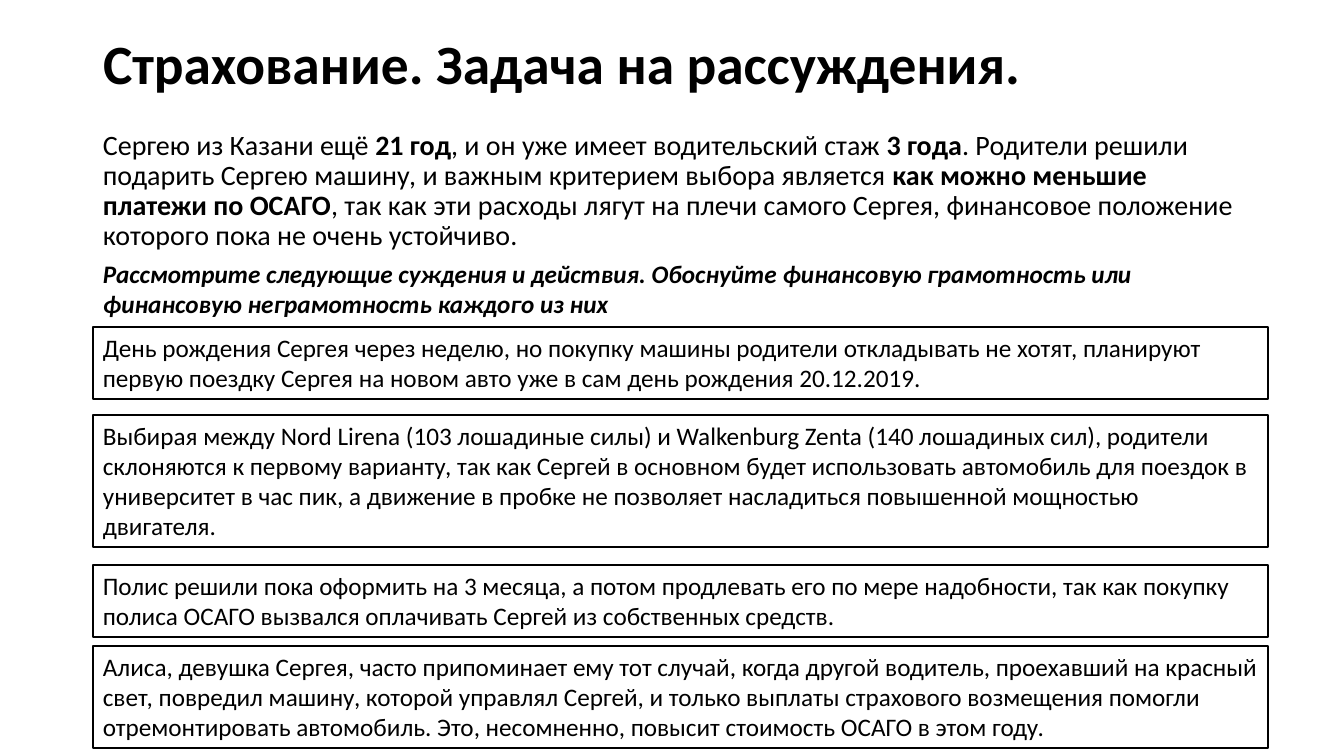
"""Build a slide with a reasoning task about car insurance."""
from pptx import Presentation
from pptx.dml.color import RGBColor
from pptx.enum.shapes import MSO_SHAPE
from pptx.enum.text import MSO_ANCHOR, MSO_AUTO_SIZE, PP_ALIGN
from pptx.util import Emu, Pt

TITLE = "Страхование. Задача на рассуждения."
STORY = [
    ("Сергею из Казани ещё ", False),
    ("21 год", True),
    (", и он уже имеет водительский стаж ", False),
    ("3 года", True),
    (". Родители решили подарить Сергею машину, и важным критерием выбора является ", False),
    ("как можно меньшие платежи по ОСАГО", True),
    (", так как эти расходы лягут на плечи самого Сергея, финансовое положение "
     "которого пока не очень устойчиво.", False),
]
TASK = ("Рассмотрите следующие суждения и действия. Обоснуйте финансовую грамотность или "
        "финансовую неграмотность каждого из них")
JUDGEMENTS = [
    (327, 72, "День рождения Сергея через неделю, но покупку машины родители откладывать не хотят, "
     "планируют первую поездку Сергея на новом авто уже в сам день рождения 20.12.2019."),
    (415, 132, "Выбирая между Nord Lirena (103 лошадиные силы) и Walkenburg Zenta (140 лошадиных сил), "
     "родители склоняются к первому варианту, так как Сергей в основном будет использовать "
     "автомобиль для поездок в университет в час пик, а движение в пробке не позволяет "
     "насладиться повышенной мощностью двигателя."),
    (565, 72, "Полис решили пока оформить на 3 месяца, а потом продлевать его по мере надобности, "
     "так как покупку полиса ОСАГО вызвался оплачивать Сергей из собственных средств."),
    (646, 102, "Алиса, девушка Сергея, часто припоминает ему тот случай, когда другой водитель, "
     "проехавший на красный свет, повредил машину, которой управлял Сергей, и только выплаты "
     "страхового возмещения помогли отремонтировать автомобиль. Это, несомненно, повысит "
     "стоимость ОСАГО в этом году."),
]
COLOURS = {"ink": "000000", "paper": "FFFFFF"}
FONT = "Calibri"
LEFT = 93


def px(length):
    return Emu(round(length * 914400 / 100.8))


def colour(name):
    return RGBColor.from_string(COLOURS[name])


def write(shape, runs, size, italic=False, anchor=MSO_ANCHOR.TOP, spacing=1.0):
    frame = shape.text_frame
    frame.word_wrap = True
    frame.auto_size = MSO_AUTO_SIZE.NONE
    frame.vertical_anchor = anchor
    paragraph = frame.paragraphs[0]
    paragraph.alignment = PP_ALIGN.LEFT
    paragraph.line_spacing = spacing
    for text, bold in runs:
        run = paragraph.add_run()
        run.text = text
        run.font.name = FONT
        run.font.size = Pt(size)
        run.font.bold = bold
        run.font.italic = italic
        run.font.color.rgb = colour("ink")


def main():
    deck = Presentation()
    deck.slide_width, deck.slide_height = px(1344), px(756)
    slide = deck.slides.add_slide(deck.slide_layouts[5])
    shapes = slide.shapes

    title = shapes.title
    title.left, title.top, title.width, title.height = px(LEFT), px(40), px(1159), px(53)
    write(title, [(TITLE, True)], 39.6, anchor=MSO_ANCHOR.MIDDLE, spacing=0.9)

    story = shapes.add_textbox(px(LEFT), px(126), px(1159), px(149))
    write(story, STORY, 20, spacing=0.9)

    for top, height, judgement in JUDGEMENTS:
        box = shapes.add_shape(MSO_SHAPE.RECTANGLE, px(LEFT), px(top), px(1175), px(height))
        box.shadow.inherit = False
        box.fill.solid()
        box.fill.fore_color.rgb = colour("paper")
        box.line.color.rgb = colour("ink")
        box.line.width = Pt(1)
        write(box, [(judgement, False)], 18)

    task = shapes.add_textbox(px(LEFT), px(253), px(1190), px(72))
    write(task, [(TASK, True)], 18, italic=True)

    deck.save("out.pptx")


if __name__ == "__main__":
    main()
